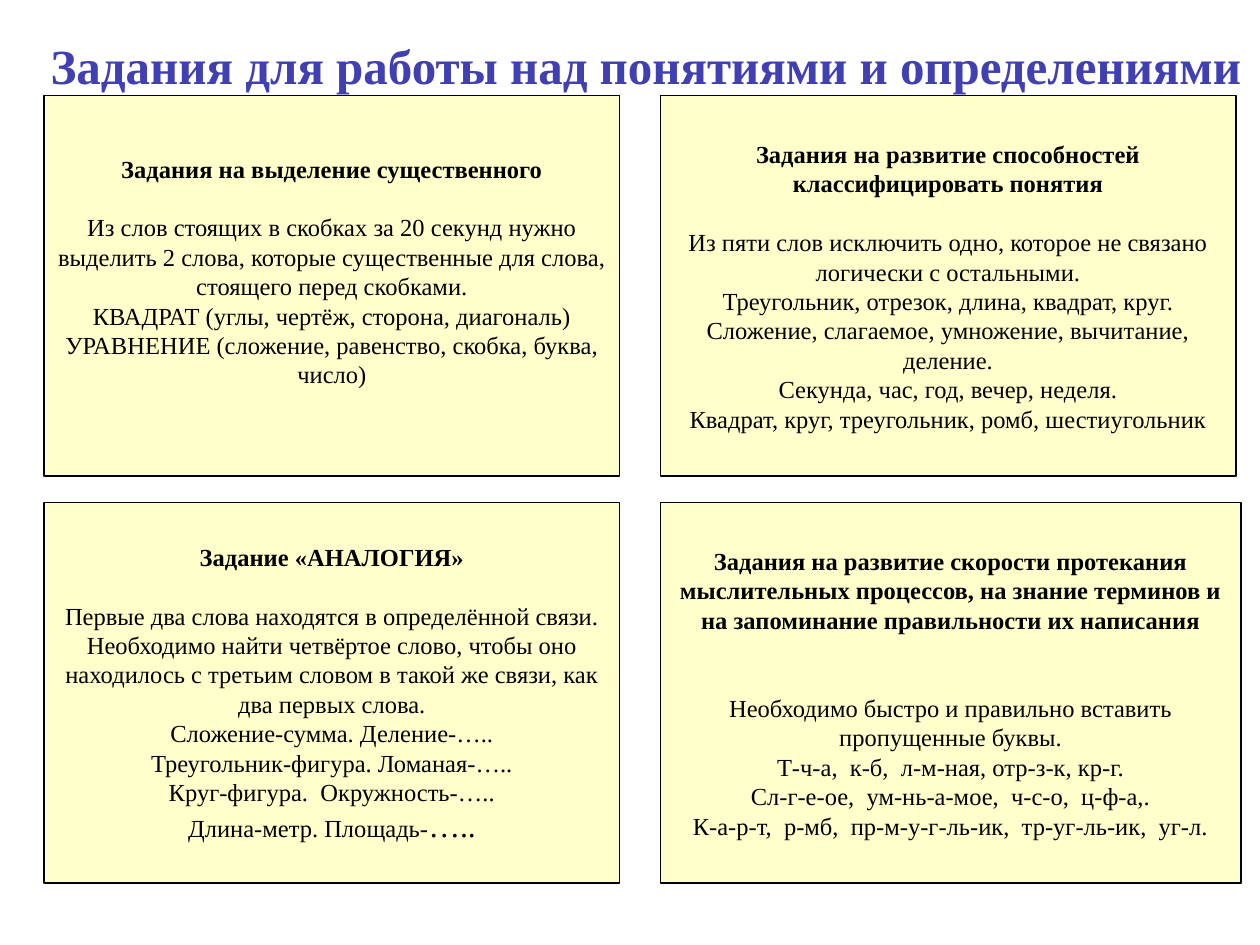
"""Build a slide with four cards of exercises on concepts and definitions."""
import pptx
import pptx.dml.color
import pptx.enum.shapes
import pptx.enum.text
import pptx.util

Pt = pptx.util.Pt
FONT = "Times New Roman"
COLOURS = {"title": "4040B3", "card": "FFFFCC", "ink": "000000"}
BLANK_LINE = 16.8
TEXT_SIZE = 14
ELLIPSIS_SIZE = 18

TITLE = "Задания для работы над понятиями и определениями"
CARDS = [
    {
        "heading": ["Задания на выделение существенного"],
        "body": [
            "Из слов стоящих в скобках за 20 секунд нужно выделить 2 слова, "
            "которые существенные для слова, стоящего перед скобками.",
            "КВАДРАТ (углы, чертёж, сторона, диагональ)",
            "УРАВНЕНИЕ (сложение, равенство, скобка, буква, число)",
        ],
        "lines_below": 1,
    },
    {
        "heading": ["Задания на развитие способностей", "классифицировать понятия"],
        "body": [
            "Из пяти слов исключить одно, которое не связано логически с остальными.",
            "Треугольник, отрезок, длина, квадрат, круг.",
            "Сложение, слагаемое, умножение, вычитание, деление.",
            "Секунда, час, год, вечер, неделя.",
            "Квадрат, круг, треугольник, ромб, шестиугольник",
        ],
    },
    {
        "heading": ["Задание «АНАЛОГИЯ»"],
        "body": [
            "Первые два слова находятся в определённой связи. Необходимо найти "
            "четвёртое слово, чтобы оно находилось с третьим словом в такой же "
            "связи, как два первых слова.",
            "Сложение-сумма. Деление-…..",
            "Треугольник-фигура. Ломаная-…..",
            "Круг-фигура.  Окружность-…..",
            "Длина-метр. Площадь-",
        ],
        "large_ending": "…..",
    },
    {
        "heading": [
            "Задания на развитие скорости протекания мыслительных процессов, "
            "на знание терминов и на запоминание правильности их написания"
        ],
        "body": [
            "Необходимо быстро и правильно вставить пропущенные буквы.",
            "Т-ч-а,  к-б,  л-м-ная, отр-з-к, кр-г.",
            "Сл-г-е-ое,  ум-нь-а-мое,  ч-с-о,  ц-ф-а,.",
            "К-а-р-т,  р-мб,  пр-м-у-г-ль-ик,  тр-уг-ль-ик,  уг-л.",
        ],
        "lines_between": 2,
        "extra_width": 2.9,
    },
]


def colour(name):
    """Return the named palette colour."""
    return pptx.dml.color.RGBColor.from_string(COLOURS[name])


def style_paragraph(para, size, bold, ink):
    """Centre a paragraph and format its runs."""
    para.alignment = pptx.enum.text.PP_ALIGN.CENTER
    for span in para.runs:
        span.font.name = FONT
        span.font.size = Pt(size)
        span.font.bold = bold
        span.font.color.rgb = colour(ink)


def add_title(page, left, top, width, height):
    """Place the slide title in the given box."""
    box = page.shapes.add_textbox(Pt(left), Pt(top), Pt(width), Pt(height))
    box.text_frame.word_wrap = False
    box.text_frame.text = TITLE
    style_paragraph(box.text_frame.paragraphs[0], 28, True, "title")


def add_card(page, card, left, top, width, height):
    """Place one exercise card in the given box."""
    box = page.shapes.add_shape(
        pptx.enum.shapes.MSO_SHAPE.RECTANGLE, Pt(left), Pt(top), Pt(width), Pt(height)
    )
    box.shadow.inherit = False
    box.fill.solid()
    box.fill.fore_color.rgb = colour("card")
    box.line.color.rgb = colour("ink")
    box.line.width = Pt(0.75)

    frame = box.text_frame
    frame.word_wrap = True
    frame.vertical_anchor = pptx.enum.text.MSO_ANCHOR.MIDDLE
    frame.margin_bottom = Pt(3.6 + BLANK_LINE * card.get("lines_below", 0))
    frame.text = "\n".join(card["heading"] + card["body"])
    heading_count = len(card["heading"])
    for index, para in enumerate(frame.paragraphs):
        style_paragraph(para, TEXT_SIZE, index < heading_count, "ink")
    first_body = frame.paragraphs[heading_count]
    first_body.space_before = Pt(BLANK_LINE * card.get("lines_between", 1))

    if "large_ending" in card:
        last = frame.paragraphs[-1]
        span = last.add_run()
        span.text = card["large_ending"]
        style_paragraph(last, TEXT_SIZE, False, "ink")
        span.font.size = Pt(ELLIPSIS_SIZE)


def add_card_grid(page, left, top, width, height, gap_across, gap_down):
    """Place the cards in two columns from the given corner."""
    for index, card in enumerate(CARDS):
        row, column = divmod(index, 2)
        add_card(
            page,
            card,
            left + column * (width + gap_across),
            top + row * (height + gap_down),
            width + card.get("extra_width", 0),
            height,
        )


def main():
    """Build and save the deck."""
    deck = pptx.Presentation()
    deck.slide_width, deck.slide_height = Pt(720), Pt(540)
    page = deck.slides.add_slide(deck.slide_layouts[6])
    add_card_grid(page, 25.2, 54.7, 329, 217.4, 23.1, 15.2)
    add_title(page, 18, 16.5, 702, 41)
    deck.save("out.pptx")


if __name__ == "__main__":
    main()
